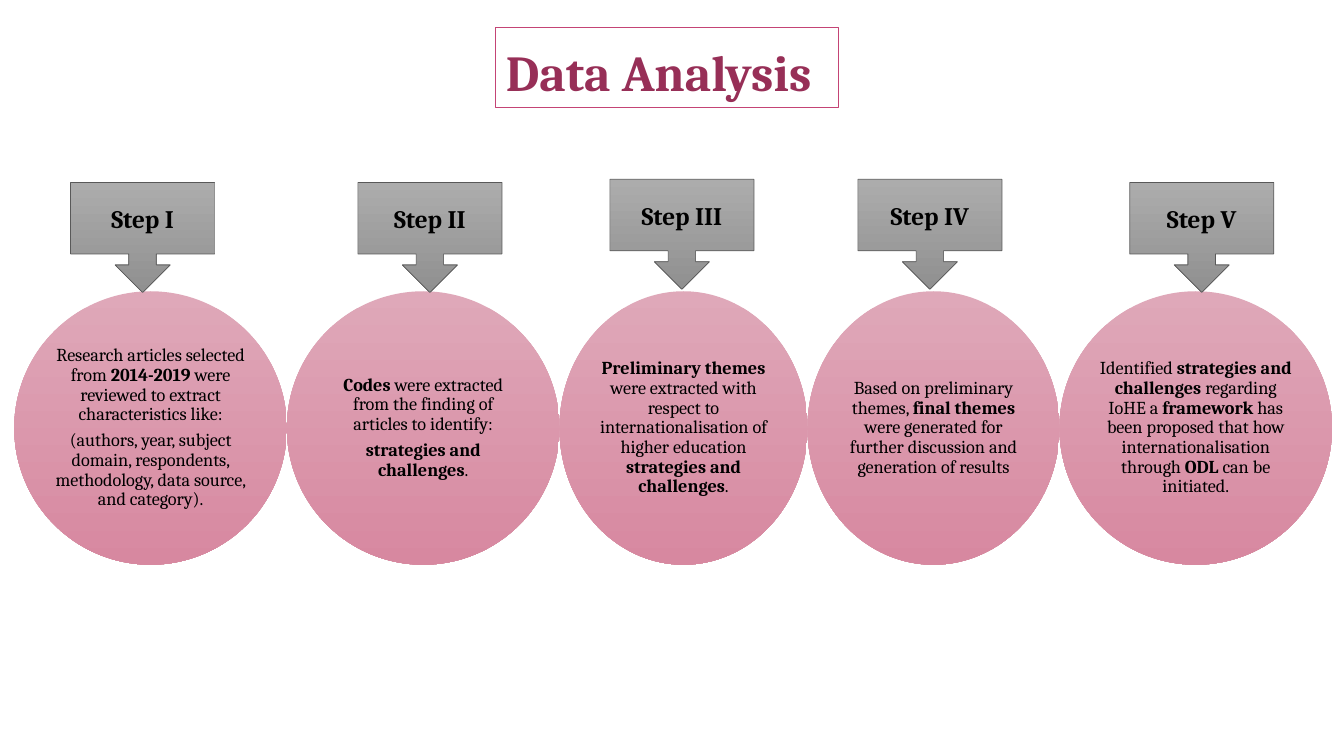
from pptx import Presentation
from pptx.dml.color import RGBColor
from pptx.enum.shapes import MSO_SHAPE as Preset
from pptx.enum.text import MSO_ANCHOR as Anchor, PP_ALIGN as Align
from pptx.util import Cm, Pt

BLACK = RGBColor(0x00, 0x00, 0x00)
PLUM = RGBColor(0x97, 0x2F, 0x57)
ROSE = RGBColor(0xC4, 0x44, 0x75)
PINKS = RGBColor(0xDF, 0xA8, 0xB9), RGBColor(0xD7, 0x88, 0xA0)
GREYS = RGBColor(0xAC, 0xAC, 0xAC), RGBColor(0x90, 0x90, 0x90)
OUTLINE = RGBColor(0x59, 0x59, 0x59)

CIRCLE_LEFT, CIRCLE_TOP, CIRCLE_HEIGHT = 0.36, 7.34, 6.89
CALLOUT_WIDTH, CALLOUT_HEIGHT = 3.63, 2.77

# label, callout left and top, circle width, paragraphs with **bold** parts
STEPS = [
    ("Step I", 1.78, 4.6, 6.87, [
        "Research articles selected from **2014-2019** were reviewed to extract "
        "characteristics like:",
        "(authors, year, subject domain, respondents, methodology, data source, "
        "and category)."]),
    ("Step II", 9.02, 4.6, 6.87, [
        "**Codes** were extracted from the finding of articles to identify:",
        "**strategies and challenges**."]),
    ("Step III", 15.37, 4.52, 6.25, [
        "**Preliminary themes **were extracted with respect to internationalisation "
        "of higher education **strategies and challenges**."]),
    ("Step IV", 21.62, 4.52, 6.35, [
        "Based on preliminary themes, **final themes **were generated for further "
        "discussion and generation of results"]),
    ("Step V", 28.47, 4.6, 6.87, [
        "Identified **strategies and challenges **regarding IoHE a **framework **has "
        "been proposed that how internationalisation through **ODL** can be initiated."]),
]


class StepSlide:
    font_name = "Cambria"

    def __init__(self, deck):
        self.shapes = deck.slides.add_slide(deck.slide_layouts[6]).shapes

    def fill_text(self, frame, paragraphs, size, color=BLACK, **formats):
        """Fill a text frame; parts between ** marks become bold."""
        frame.word_wrap = True
        for index, marked in enumerate(paragraphs):
            paragraph = frame.add_paragraph() if index else frame.paragraphs[0]
            for name, value in formats.items():
                setattr(paragraph, name, value)
            for part, words in enumerate(marked.split("**")):
                if not words:
                    continue
                run = paragraph.add_run()
                run.text = words
                look = {"name": self.font_name, "size": Pt(size), "bold": part % 2 == 1}
                for name, value in look.items():
                    setattr(run.font, name, value)
                run.font.color.rgb = color

    def gradient_shape(self, preset, left, top, width, height, colors):
        shape = self.shapes.add_shape(preset, Cm(left), Cm(top), Cm(width), Cm(height))
        shape.shadow.inherit = False
        shape.fill.gradient()
        shape.fill.gradient_angle = 270
        for stop, color, position in zip(shape.fill.gradient_stops, colors, (0, 1)):
            stop.color.rgb = color
            stop.position = position
        shape.text_frame.vertical_anchor = Anchor.MIDDLE
        return shape

    def title(self, words):
        heading = self.shapes.add_textbox(Cm(12.5), Cm(0.69), Cm(8.64), Cm(2.01))
        heading.line.color.rgb = ROSE
        heading.line.width = Pt(0.75)
        heading.text_frame.vertical_anchor = Anchor.BOTTOM
        self.fill_text(heading.text_frame, [f"**{words}**"], 36, PLUM, line_spacing=0.9)

    def circle(self, left, width, paragraphs):
        circle = self.gradient_shape(Preset.OVAL, left, CIRCLE_TOP, width,
                                     CIRCLE_HEIGHT, PINKS)
        circle.line.fill.background()
        for side in ("left", "top", "right", "bottom"):
            setattr(circle.text_frame, f"margin_{side}", 0)
        self.fill_text(circle.text_frame, paragraphs, 13, alignment=Align.CENTER,
                       line_spacing=0.9, space_after=Pt(4.55))

    def callout(self, label, left, top):
        callout = self.gradient_shape(Preset.DOWN_ARROW_CALLOUT, left, top,
                                      CALLOUT_WIDTH, CALLOUT_HEIGHT, GREYS)
        callout.line.color.rgb = OUTLINE
        callout.line.width = Pt(0.5)
        self.fill_text(callout.text_frame, [f"**{label}**"], 18, alignment=Align.CENTER)


def main():
    deck = Presentation()
    deck.slide_width, deck.slide_height = Cm(33.87), Cm(19.05)
    slide = StepSlide(deck)
    slide.title("Data Analysis")
    circle_left = CIRCLE_LEFT
    for _, _, _, circle_width, paragraphs in STEPS:
        slide.circle(circle_left, circle_width, paragraphs)
        circle_left += circle_width
    for label, left, top, _, _ in STEPS:
        slide.callout(label, left, top)
    deck.save("out.pptx")


if __name__ == "__main__":
    main()
